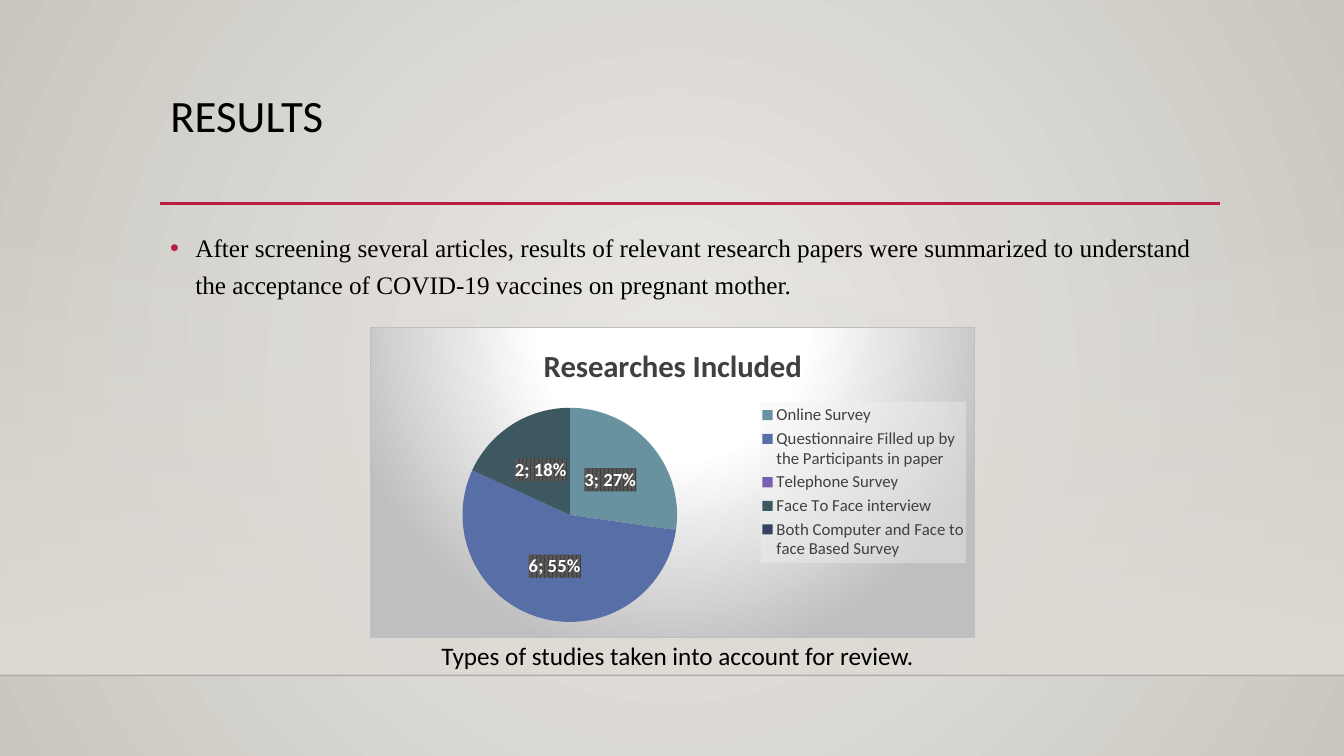
from lxml import etree
from pptx import Presentation
from pptx.chart.data import CategoryChartData
from pptx.dml.color import RGBColor
from pptx.enum.chart import XL_CHART_TYPE, XL_LABEL_POSITION, XL_LEGEND_POSITION
from pptx.enum.shapes import MSO_CONNECTOR, MSO_SHAPE
from pptx.enum.text import MSO_ANCHOR, MSO_AUTO_SIZE, PP_ALIGN
from pptx.oxml import parse_xml
from pptx.oxml.ns import nsdecls, qn
from pptx.util import Inches, Pt

COLORS = {
    "black": "000000", "accent": "B71E42", "white": "FFFFFF",
    "bg_center": "ECEAE7", "bg_edge": "CAC7C1", "wall": "DFDBD5",
    "floor_line": "000001", "chart_text": "404040", "chart_edge": "BFBFBF",
    "legend": "F2F2F2", "label_front": "404040", "label_back": "595959",
}
STUDIES = [
    ("Online Survey", 3, "6892A0"),
    ("Questionnaire Filled up by the Participants in paper", 6, "586EA6"),
    ("Telephone Survey", 0, "795FAF"),
    ("Face To Face interview", 2, "3D5861"),
    ("Both Computer and Face to face Based Survey", 0, "354264"),
]
NS = nsdecls("a", "c")


def rgb(name):
    return RGBColor.from_string(COLORS[name])


def color_xml(name, alpha=100):
    return (f'<a:srgbClr val="{COLORS[name]}">'
            f'<a:alpha val="{alpha * 1000}"/></a:srgbClr>')


def gradient_xml(stops, direction):
    """Stops are (position, colour, alpha) in percent."""
    stops_xml = "".join(f'<a:gs pos="{pos * 1000}">{color_xml(name, alpha)}</a:gs>'
                        for pos, name, alpha in stops)
    return f"<a:gradFill {NS}><a:gsLst>{stops_xml}</a:gsLst>{direction}</a:gradFill>"


def circle_xml(top, bottom):
    return ('<a:path path="circle"><a:fillToRect l="50000" '
            f't="{top * 1000}" r="50000" b="{bottom * 1000}"/></a:path>')


def fill_gradient(fill, owner, stops, direction):
    fill.solid()
    solid = next(owner.iter(qn("a:solidFill")))
    solid.getparent().replace(solid, parse_xml(gradient_xml(stops, direction)))


def chart_box(content):
    """Shape properties for a part of the chart."""
    return parse_xml(f"<c:spPr {NS}>{content}</c:spPr>")


def set_layout(part, index, **fractions):
    """Fix the place of a chart part in fractions of the chart."""
    for old in part.findall(qn("c:layout")):
        part.remove(old)
    target = '<c:layoutTarget val="inner"/>' if part.tag == qn("c:plotArea") else ""
    modes = "".join(f'<c:{axis}Mode val="edge"/>' for axis in "xy")
    sizes = "".join(f'<c:{key} val="{value}"/>' for key, value in fractions.items())
    part.insert(index, parse_xml(
        f"<c:layout {NS}><c:manualLayout>{target}{modes}{sizes}"
        "</c:manualLayout></c:layout>"))


def style_font(font, size, color="black", name="Calibri", bold=False):
    font.size, font.name, font.bold = Pt(size), name, bold
    font.color.rgb = rgb(color)


def add_rule(slide, left, right, y, color, width, alpha=100):
    rule = slide.shapes.add_connector(MSO_CONNECTOR.STRAIGHT, Inches(left),
                                      Inches(y), Inches(right), Inches(y))
    rule.line.color.rgb = rgb(color)
    rule.line.width = Pt(width)
    properties = rule._element.spPr
    etree.SubElement(next(properties.iter(qn("a:srgbClr"))), qn("a:alpha"),
                     val=str(alpha * 1000))
    etree.SubElement(properties, qn("a:effectLst"))


def add_backdrop(slide):
    fill_gradient(slide.background.fill, slide._element,
                  [(0, "bg_center", 100), (100, "bg_edge", 100)], circle_xml(50, 50))
    wall = slide.shapes.add_shape(MSO_SHAPE.RECTANGLE, 0, Inches(2.21),
                                  Inches(13.33), Inches(4.49))
    wall.shadow.inherit = False
    wall.line.fill.background()
    fill_gradient(wall.fill, wall._element.spPr,
                  [(0, "wall", 0), (100, "wall", 100)], '<a:lin ang="5400000"/>')
    add_rule(slide, 0, 13.33, 6.7, "floor_line", 1, alpha=20)
    add_rule(slide, 1.59, 12.1, 2.02, "accent", 2.5)


def set_title(slide, text):
    title = slide.shapes.title
    title.left, title.top = Inches(1.59), Inches(0.88)
    title.width, title.height = Inches(10.5), Inches(1.15)
    frame = title.text_frame
    frame.vertical_anchor = MSO_ANCHOR.TOP
    frame.auto_size = MSO_AUTO_SIZE.NONE
    paragraph = frame.paragraphs[0]
    paragraph.alignment = PP_ALIGN.LEFT
    paragraph.line_spacing = 0.9
    run = paragraph.add_run()
    run.text = text
    style_font(run.font, 32)


def add_text(slide, left, top, width, height, text, font_name="Calibri"):
    box = slide.shapes.add_textbox(Inches(left), Inches(top),
                                   Inches(width), Inches(height))
    box.text_frame.word_wrap = True
    paragraph = box.text_frame.paragraphs[0]
    run = paragraph.add_run()
    run.text = text
    style_font(run.font, 18, name=font_name)
    return paragraph


def make_bullet(paragraph):
    paragraph.line_spacing = 1.2
    properties = paragraph._p.get_or_add_pPr()
    properties.set("marL", str(Inches(0.25)))
    properties.set("indent", str(-Inches(0.25)))
    color = etree.SubElement(properties, qn("a:buClr"))
    etree.SubElement(color, qn("a:srgbClr"), val=COLORS["accent"])
    etree.SubElement(properties, qn("a:buFont"), typeface="Arial")
    etree.SubElement(properties, qn("a:buChar"), char="•")


def style_labels(plot):
    plot.has_data_labels = True
    labels = plot.data_labels
    labels.show_value = labels.show_percentage = True
    labels.position = XL_LABEL_POSITION.CENTER
    style_font(labels.font, 13.3, "white", bold=True)
    element = labels._element
    element.find(qn("c:txPr")).addprevious(chart_box(
        f'<a:pattFill prst="pct75"><a:fgClr>{color_xml("label_front")}</a:fgClr>'
        f'<a:bgClr>{color_xml("label_back")}</a:bgClr></a:pattFill>'))
    separator = parse_xml(f"<c:separator {NS}>; </c:separator>")
    leader = element.find(qn("c:showLeaderLines"))
    if leader is None:
        element.append(separator)
    else:
        leader.addprevious(separator)
    empty = [i for i, (_, count, _) in enumerate(STUDIES) if count == 0]
    for position, index in enumerate(empty):
        element.insert(position, parse_xml(
            f'<c:dLbl {NS}><c:idx val="{index}"/><c:delete val="1"/></c:dLbl>'))


def add_study_pie(slide):
    data = CategoryChartData()
    data.categories = [name for name, _, _ in STUDIES]
    data.add_series("Researches Included", [count for _, count, _ in STUDIES])
    chart = slide.shapes.add_chart(XL_CHART_TYPE.PIE, Inches(3.67), Inches(3.24),
                                   Inches(6), Inches(3.09), data).chart
    style_font(chart.font, 10)
    chart.has_title = True
    heading = chart.chart_title.text_frame.paragraphs[0].add_run()
    heading.text = "Researches Included"
    style_font(heading.font, 22, "chart_text", bold=True)

    plot = chart.plots[0]
    plot.vary_by_categories = True
    for index, (_, _, color) in enumerate(STUDIES):
        fill = plot.series[0].points[index].format.fill
        fill.solid()
        fill.fore_color.rgb = RGBColor.from_string(color)
    style_labels(plot)

    chart.has_legend = True
    legend = chart.legend
    legend.position = XL_LEGEND_POSITION.RIGHT
    legend.include_in_layout = False
    style_font(legend.font, 12, "chart_text")
    legend._element.find(qn("c:txPr")).addprevious(
        chart_box(f'<a:solidFill>{color_xml("legend", 39)}</a:solidFill>'))
    set_layout(legend._element, 1, x=0.65, y=0.24, w=0.34, h=0.52)

    root = chart._chartSpace
    set_layout(next(root.iter(qn("c:plotArea"))), 0, x=0.15, y=0.26, w=0.36, h=0.69)
    backdrop = gradient_xml([(0, "white", 100), (39, "white", 100),
                             (100, "chart_edge", 100)], circle_xml(-80, 180))
    root.find(qn("c:chart")).addnext(chart_box(
        f'{backdrop}<a:ln w="{Pt(0.75)}"><a:solidFill>{color_xml("chart_edge")}'
        "</a:solidFill></a:ln>"))


def main():
    deck = Presentation()
    deck.slide_width, deck.slide_height = Inches(13.33), Inches(7.5)
    slide = deck.slides.add_slide(deck.slide_layouts[5])
    add_backdrop(slide)
    set_title(slide, "RESULTS")
    make_bullet(add_text(
        slide, 1.59, 2.2, 10.5, 0.95,
        "After screening several articles, results of relevant research papers were "
        "summarized to understand the acceptance of COVID-19 vaccines on pregnant mother.",
        "Times New Roman"))
    add_study_pie(slide)
    add_text(slide, 4.28, 6.3, 5.13, 0.4,
             "Types of studies taken into account for review.")
    deck.save("out.pptx")


if __name__ == "__main__":
    main()
